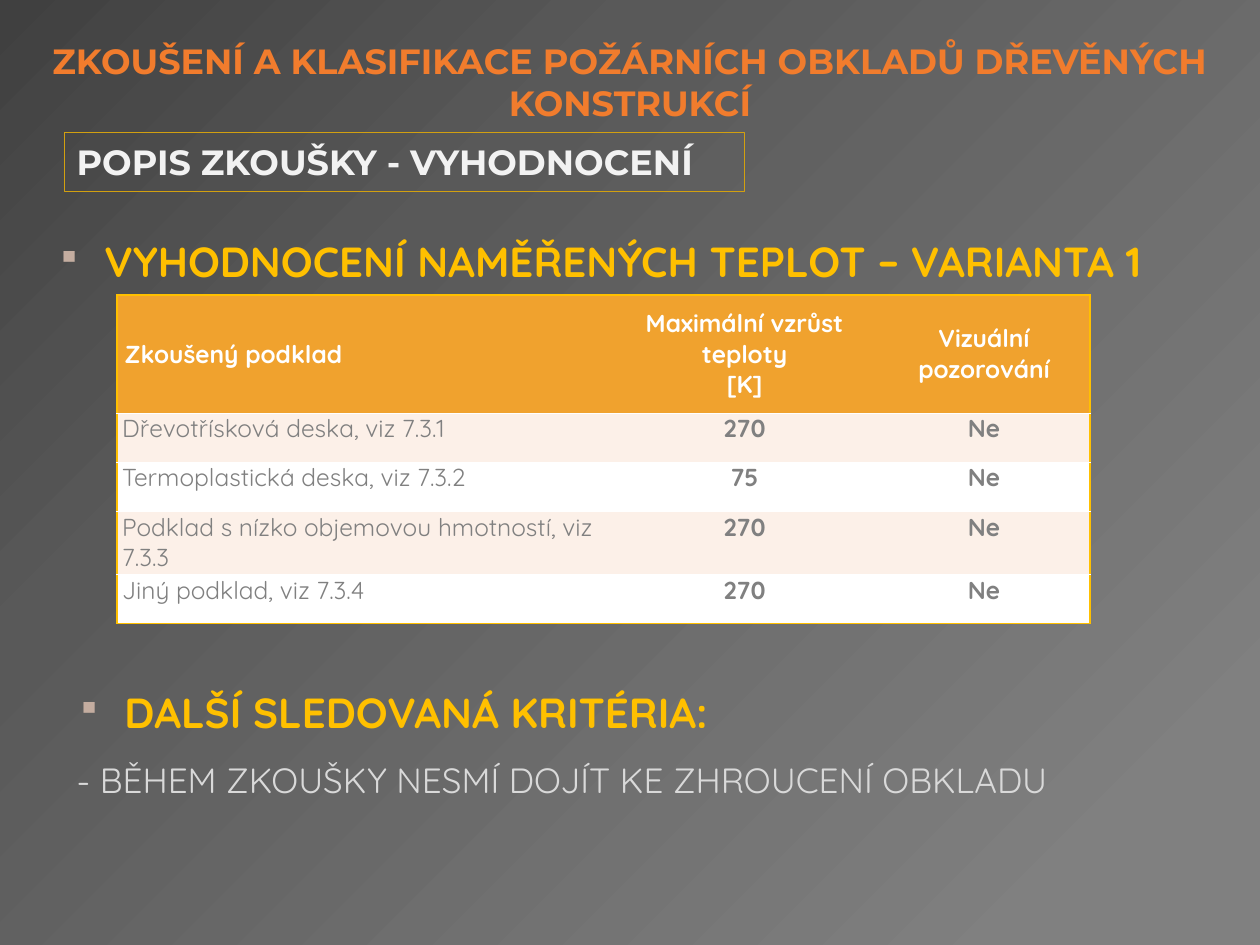
import pptx
import pptx.dml.color
import pptx.enum.shapes
import pptx.enum.text
import pptx.oxml.ns
import pptx.util
from lxml import etree

HEAD, BODY = "Montserrat", "Quicksand"
GOLD, WHITE, GREY = "FFC000", "FFFFFF", "808080"
MID = pptx.enum.text.MSO_ANCHOR.MIDDLE
TOP = pptx.enum.text.MSO_ANCHOR.TOP
LEFT = pptx.enum.text.PP_ALIGN.LEFT
CENTER = pptx.enum.text.PP_ALIGN.CENTER


def color(code):
    """Turn a hex string into a colour."""
    return pptx.dml.color.RGBColor.from_string(code)


def node(tag, up=None, **attrs):
    """Make a drawing element, under a parent if one is given."""
    name = pptx.oxml.ns.qn(tag)
    item = etree.Element(name) if up is None else etree.SubElement(up, name)
    for key, value in attrs.items():
        item.set(key, str(value))
    return item


class Deck:
    """Hold the style and the current slide, on a grid of 100 by 75 units."""

    def __init__(self, cols=100, rows=75):
        """Start a deck with one blank slide."""
        self.show = pptx.Presentation()
        self.show.slide_width = pptx.util.Inches(10)
        self.show.slide_height = pptx.util.Inches(7.5)
        self.wide = self.show.slide_width / cols
        self.high = self.show.slide_height / rows
        self.slide = self.show.slides.add_slide(self.show.slide_layouts[6])

    def area(self, x, y, w, h):
        """Turn grid units into lengths."""
        return [round(v * unit) for v, unit in
                ((x, self.wide), (y, self.high), (w, self.wide), (h, self.high))]

    def back(self, stops, angle):
        """Fill the background with a gradient."""
        fill = self.slide.background.fill
        fill.gradient()
        fill.gradient_angle = -angle % 360
        tag = pptx.oxml.ns.qn("a:gsLst")
        group = next(self.slide.element.iter(tag))
        for old in list(group):
            group.remove(old)
        for place, code in stops:
            stop = node("a:gs", group, pos=place * 1000)
            node("a:srgbClr", stop, val=code)

    def words(self, para, text, size, code, bold=True, font=BODY, align=LEFT):
        """Add text to a paragraph, one run a line."""
        para.alignment = align
        for i, part in enumerate(text.split("\n")):
            if i:
                para.add_line_break()
            run = para.add_run()
            run.text = part
            run.font.size = pptx.util.Pt(size)
            run.font.name = font
            run.font.bold = bold
            run.font.color.rgb = color(code)

    def bullet(self, para):
        """Give a paragraph a small square bullet and a hanging indent."""
        gap = pptx.util.Inches(0.38)
        props = para._p.get_or_add_pPr()
        props.set("marL", str(gap))
        props.set("indent", str(-gap))
        node("a:srgbClr", node("a:buClr", props), val="C4ADA0")
        node("a:buSzPct", props, val=80000)
        node("a:buChar", props, char="▪")

    def text(self, area, lines, anchor=TOP, space=None):
        """Add a text box of (text, style, bulleted) lines."""
        frame = self.slide.shapes.add_textbox(*self.area(*area)).text_frame
        frame.word_wrap = True
        frame.vertical_anchor = anchor
        for i, (line, style, mark) in enumerate(lines):
            para = frame.add_paragraph() if i else frame.paragraphs[0]
            if space:
                para.line_spacing = space
            if mark:
                self.bullet(para)
            self.words(para, line, **style)

    def frame(self, area, label, line, style):
        """Add an outlined box with a label."""
        kind = pptx.enum.shapes.MSO_SHAPE.RECTANGLE
        box = self.slide.shapes.add_shape(kind, *self.area(*area))
        box.shadow.inherit = False
        box.fill.background()
        box.line.color.rgb = color(line)
        box.line.width = pptx.util.Pt(0.75)
        box.text_frame.word_wrap = True
        box.text_frame.vertical_anchor = MID
        self.words(box.text_frame.paragraphs[0], label, **style)

    def edge(self, cell, sides):
        """Set left, right, top and bottom cell borders; None hides one."""
        props = cell._tc.get_or_add_tcPr()
        for i, (side, code) in enumerate(zip("LRTB", sides)):
            line = node("a:ln" + side, w=pptx.util.Pt(1))
            if code:
                node("a:srgbClr", node("a:solidFill", line), val=code)
            else:
                node("a:noFill", line)
            props.insert(i, line)

    def table(self, area, cols, rows, data):
        """Add a table with a gold frame, a head row and striped rows."""
        grid = self.slide.shapes.add_table(
            len(rows), len(cols), *self.area(*area)).table
        grid.horz_banding = False
        for i, w in enumerate(cols):
            grid.columns[i].width = round(w * self.wide)
        for i, h in enumerate(rows):
            grid.rows[i].height = round(h * self.high)
        for r, row in enumerate(data):
            for c, value in enumerate(row):
                cell = grid.cell(r, c)
                cell.margin_right = cell.margin_top = cell.margin_bottom = 0
                pad = (0.04 if r else 0.06) if c == 0 else 0
                cell.margin_left = pptx.util.Inches(pad)
                cell.vertical_anchor = TOP if r else MID
                cell.fill.solid()
                tint = ("FCF0E8" if r % 2 else WHITE) if r else "F0A22E"
                cell.fill.fore_color.rgb = color(tint)
                self.edge(cell, (GOLD if c == 0 else None,
                                 GOLD if c == len(cols) - 1 else None,
                                 WHITE if r else GOLD,
                                 GOLD if r == len(rows) - 1 else WHITE))
                self.words(cell.text_frame.paragraphs[0], value, 14,
                           GREY if r else WHITE, bold=r == 0 or c > 0,
                           align=CENTER if c else LEFT)


def main():
    """Build the slide and save it."""
    deck = Deck()
    deck.back([(0, "404040"), (30, "595959"), (89, GREY)], 45)
    topic = dict(size=24, code=GOLD)
    deck.text((0, 2.9, 100, 7.1),
              [("ZKOUŠENÍ A KLASIFIKACE POŽÁRNÍCH OBKLADŮ DŘEVĚNÝCH KONSTRUKCÍ",
                dict(size=20, code="F17C2D", font=HEAD, align=CENTER), False)],
              anchor=MID)
    deck.text((3.5, 14.2, 96.1, 8.7),
              [("VYHODNOCENÍ NAMĚŘENÝCH TEPLOT – VARIANTA 1", topic, True)],
              space=2.0)
    deck.table((9.3, 23.4, 77.2, 26), (39.2, 21.2, 16.8),
               (9.4, 3.9, 3.9, 5, 3.9),
               [("Zkoušený podklad", "Maximální vzrůst teploty\n[K]",
                 "Vizuální pozorování"),
                ("Dřevotřísková deska, viz 7.3.1", "270", "Ne"),
                ("Termoplastická deska, viz 7.3.2", "75", "Ne"),
                ("Podklad s nízko objemovou hmotností, viz 7.3.3", "270", "Ne"),
                ("Jiný podklad, viz 7.3.4", "270", "Ne")])
    deck.text((5.1, 52, 80.3, 11.5),
              [("DALŠÍ SLEDOVANÁ KRITÉRIA:", topic, True),
               ("- BĚHEM ZKOUŠKY NESMÍ DOJÍT KE ZHROUCENÍ OBKLADU",
                dict(size=20, code="D9D9D9", bold=False), False)],
              space=1.5)
    deck.frame((5.1, 10.5, 54, 4.7), "POPIS ZKOUŠKY - VYHODNOCENÍ", "D2A010",
               dict(size=20, code="F2F2F2", font=HEAD))
    deck.show.save("out.pptx")


if __name__ == "__main__":
    main()
